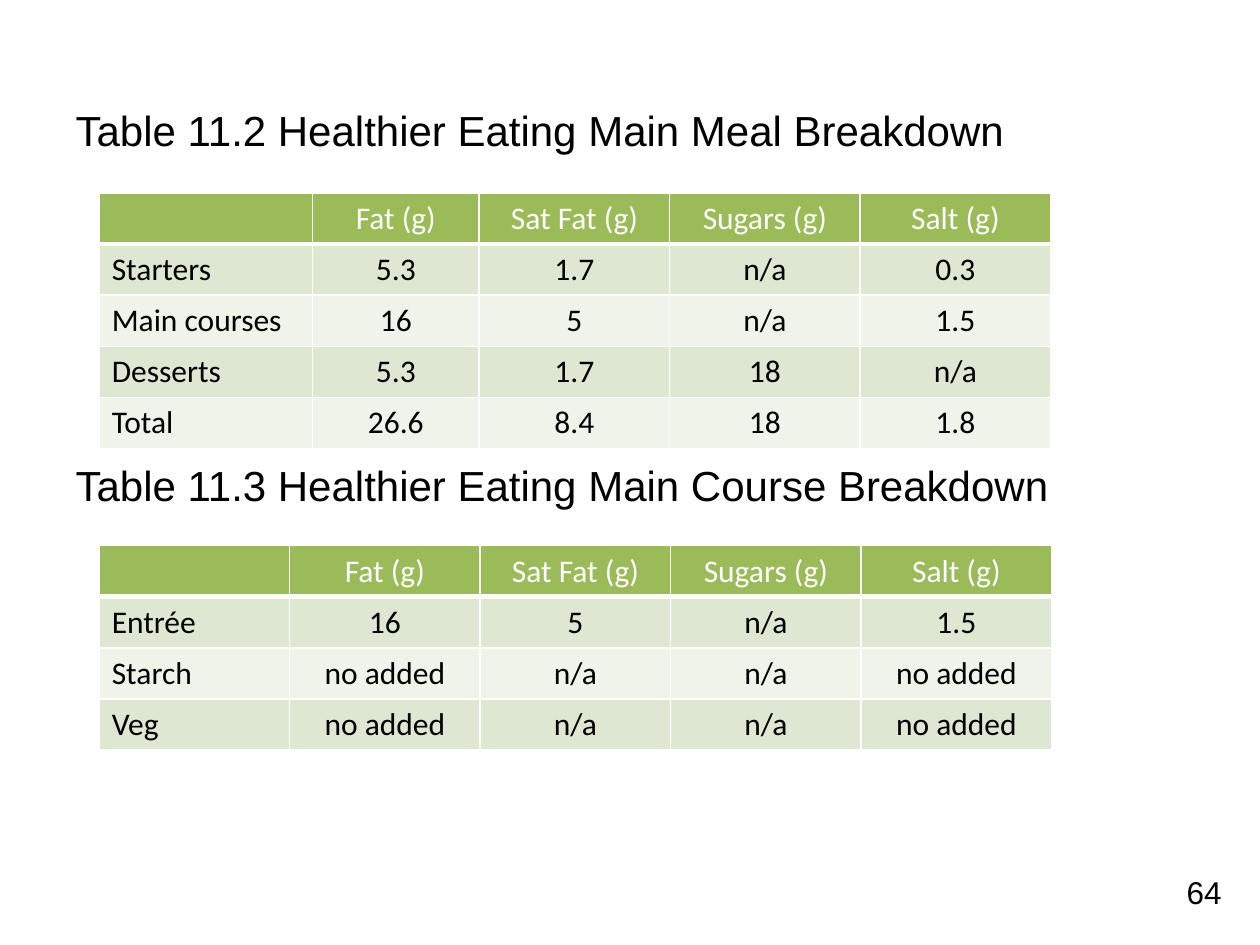
from lxml.etree import SubElement
from pptx import Presentation
from pptx.dml.color import RGBColor
from pptx.enum.text import MSO_ANCHOR, MSO_AUTO_SIZE, PP_ALIGN
from pptx.oxml.ns import qn
from pptx.util import Cm, Pt

BLACK = RGBColor(0x00, 0x00, 0x00)
WHITE = RGBColor(0xFF, 0xFF, 0xFF)
GREEN = RGBColor(0x9B, 0xBB, 0x59)
BANDS = (RGBColor(0xDE, 0xE7, 0xD1), RGBColor(0xEF, 0xF3, 0xEA))

CAPTIONS = (
    "Table 11.2 Healthier Eating Main Meal Breakdown",
    "Table 11.3 Healthier Eating Main Course Breakdown",
)
CAPTION_GAP = Pt(174)
PAGE_NUMBER = "64"

HEADER = ("", "Fat (g)", "Sat Fat (g)", "Sugars (g)", "Salt (g)")
MEAL_ROWS = (
    ("Starters", "5.3", "1.7", "n/a", "0.3"),
    ("Main courses", "16", "5", "n/a", "1.5"),
    ("Desserts", "5.3", "1.7", "18", "n/a"),
    ("Total", "26.6", "8.4", "18", "1.8"),
)
COURSE_ROWS = (
    ("Entrée", "16", "5", "n/a", "1.5"),
    ("Starch", "no added", "n/a", "n/a", "no added"),
    ("Veg", "no added", "n/a", "n/a", "no added"),
)
# top in cm, column widths in cm, body rows
TABLES = (
    (3.89, (4.3, 3.36, 3.84, 3.84, 3.84), MEAL_ROWS),
    (11.0, (3.84,) * 5, COURSE_ROWS),
)
TABLE_LEFT = 2.0
ROW_HEIGHT = 1.03


def format_runs(para, font_name, size, color):
    for span in para.runs:
        span.font.name = font_name
        span.font.size = Pt(size)
        span.font.bold = False
        span.font.color.rgb = color


def add_borders(cell, bottom_width):
    properties = cell._tc.get_or_add_tcPr()
    for side in "LRTB":
        width = bottom_width if side == "B" else Pt(1)
        line = SubElement(properties, qn(f"a:ln{side}"), w=str(width))
        fill = SubElement(line, qn("a:solidFill"))
        SubElement(fill, qn("a:srgbClr"), val=str(WHITE))


def add_captions(slide):
    box = slide.placeholders[1]
    box.left, box.top, box.width, box.height = Cm(1.27), Cm(1.9), Cm(22.86), Cm(14.8)
    frame = box.text_frame
    frame.auto_size = MSO_AUTO_SIZE.NONE
    frame.margin_top = Cm(0.2)
    frame.text = "\n".join(CAPTIONS)
    for index, para in enumerate(frame.paragraphs):
        properties = para._p.get_or_add_pPr()
        properties.set("marL", "0")
        properties.set("indent", "0")
        SubElement(properties, qn("a:buNone"))
        para.space_before = CAPTION_GAP if index else Pt(0)
        format_runs(para, "Arial", 24, BLACK)


def add_page_number(slide):
    box = slide.shapes.add_textbox(Cm(23.67), Cm(17.48), Cm(1.7), Cm(1.02))
    box.text_frame.word_wrap = True
    para = box.text_frame.paragraphs[0]
    para.text = PAGE_NUMBER
    format_runs(para, "Arial", 18, BLACK)


def add_breakdown(slide, top, widths, body):
    rows = (HEADER, *body)
    table = slide.shapes.add_table(
        len(rows), len(widths), Cm(TABLE_LEFT), Cm(top),
        Cm(sum(widths)), Cm(ROW_HEIGHT * len(rows)),
    ).table
    for column, width in zip(table.columns, widths):
        column.width = Cm(width)
    for r, values in enumerate(rows):
        table.rows[r].height = Cm(ROW_HEIGHT)
        for c, value in enumerate(values):
            cell = table.cell(r, c)
            add_borders(cell, Pt(1) if r else Pt(3))
            cell.fill.solid()
            cell.fill.fore_color.rgb = BANDS[(r - 1) % 2] if r else GREEN
            para = cell.text_frame.paragraphs[0]
            para.text = value
            if c:
                para.alignment = PP_ALIGN.CENTER
                cell.vertical_anchor = MSO_ANCHOR.MIDDLE
            format_runs(para, "Calibri", 18, BLACK if r else WHITE)


def main():
    deck = Presentation()
    deck.slide_width, deck.slide_height = Cm(25.4), Cm(19.05)
    slide = deck.slides.add_slide(deck.slide_layouts.get_by_name("Title and Content"))
    title = slide.shapes.title.element
    title.getparent().remove(title)
    add_captions(slide)
    add_page_number(slide)
    for top, widths, body in TABLES:
        add_breakdown(slide, top, widths, body)
    deck.save("out.pptx")


if __name__ == "__main__":
    main()
